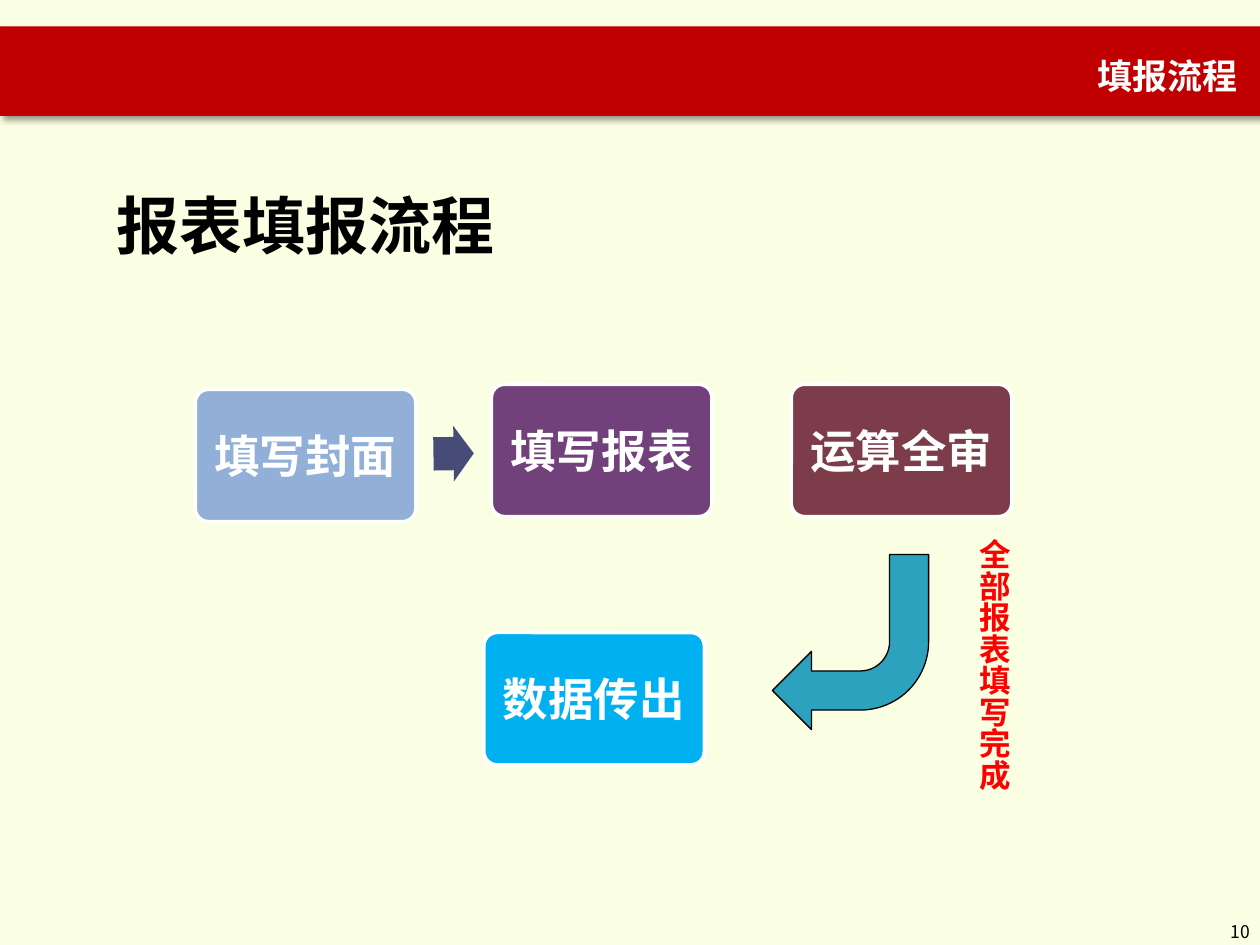
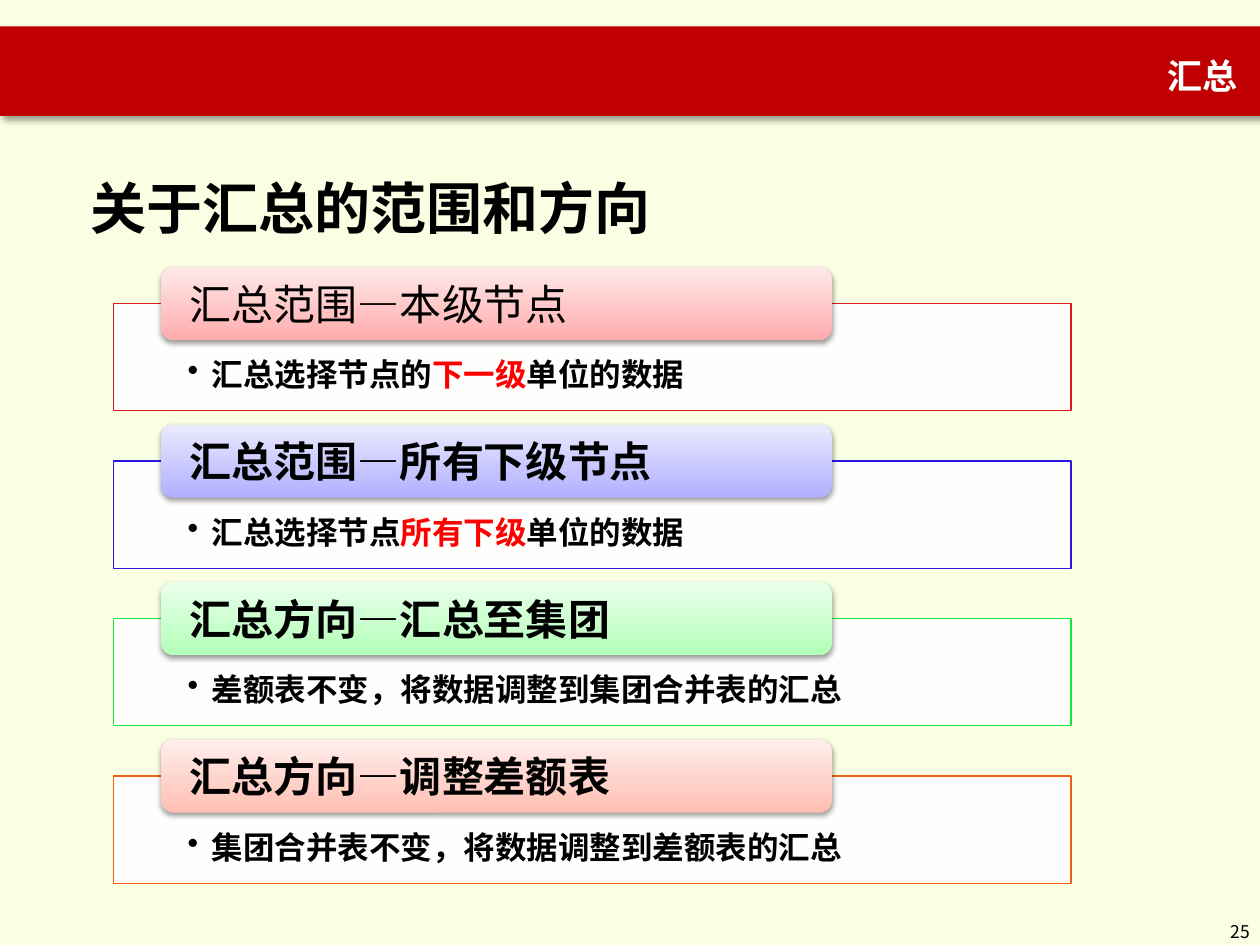
import dataclasses

import lxml.etree
import pptx
import pptx.dml.color
import pptx.enum.shapes
import pptx.enum.text
import pptx.oxml.ns
import pptx.util

Inches = pptx.util.Inches
qn = pptx.oxml.ns.qn
SHAPE = pptx.enum.shapes.MSO_SHAPE
ALIGN = pptx.enum.text.PP_ALIGN
ANCHOR = pptx.enum.text.MSO_ANCHOR
FIT = pptx.enum.text.MSO_AUTO_SIZE


@dataclasses.dataclass(frozen=True)
class Theme:
    cream: str = "FAFEE2"
    band: str = "C00000"
    white: str = "FFFFFF"
    black: str = "000000"
    red: str = "FF0000"
    arrow: str = "474B78"
    bend: str = "2DA2BF"
    cjk: str = "Noto Sans CJK SC"
    head: str = "Arial"
    body: str = "DejaVu Sans"
    page: int = 10
    note: int = 18
    title: int = 20
    tab: int = 24
    step: int = 26
    wide: int = 32
    big: int = 36


THEME = Theme()

# Step text, left, top, fill
STEPS = [
    ("填写封面", 1.55, 3.09, "92AFD8"),
    ("填写报表", 3.9, 3.05, "72417B"),
    ("运算全审", 6.28, 3.05, "7D3C4A"),
    ("数据传出", 3.84, 5.02, "00B0F0"),
]

# Tab text, bold tab, runs of the note (odd ones red), line, dark and pale tint
RULES = [
    ("汇总范围—本级节点", False, ["汇总选择节点的", "下一级", "单位的数据"],
     "DA1A23", "FFACAD", "FFE9E9"),
    ("汇总范围—所有下级节点", True, ["汇总选择节点", "所有下级", "单位的数据"],
     "2817E2", "B1AFFF", "EAEAFF"),
    ("汇总方向—汇总至集团", True, ["差额表不变，将数据调整到集团合并表的汇总"],
     "15E744", "B2FFB7", "EAFFEC"),
    ("汇总方向—调整差额表", True, ["集团合并表不变，将数据调整到差额表的汇总"],
     "EB6116", "FFBFB3", "FFEEEB"),
]


def rgb(code):
    return pptx.dml.color.RGBColor.from_string(code)


def box(left, top, width, height):
    return [Inches(side) for side in (left, top, width, height)]


def style(para, size, color, face, bold=True, align=ALIGN.LEFT):
    """Format a paragraph and return its default run properties."""
    para.alignment = align
    font = para.font
    font.size = pptx.util.Pt(size)
    font.bold = bold
    font.color.rgb = rgb(color)
    font.name = face
    props = para._p.pPr.find(qn("a:defRPr"))
    lxml.etree.SubElement(props, qn("a:ea"), typeface=THEME.cjk)
    return props


def shadow(parent, alpha, blur, dist, angle):
    """Append a black outer shadow; blur and distance are in points."""
    effects = lxml.etree.SubElement(parent, qn("a:effectLst"))
    outer = lxml.etree.SubElement(
        effects, qn("a:outerShdw"), blurRad=str(pptx.util.Pt(blur)),
        dist=str(pptx.util.Pt(dist)), dir=str(angle * 60000),
        algn="tl", rotWithShape="0")
    color = lxml.etree.SubElement(outer, qn("a:srgbClr"), val=THEME.black)
    lxml.etree.SubElement(color, qn("a:alpha"), val=str(alpha * 1000))
    return effects


def cast(shape, *values):
    """Replace the empty effect list of a shape with a shadow."""
    props = shape.element.spPr
    props.remove(props.find(qn("a:effectLst")))
    shadow(props, *values)


def add_form(slide, kind, place, fill, line=None, weight=0.75):
    shape = slide.shapes.add_shape(kind, *box(*place))
    shape.shadow.inherit = False
    if fill:
        shape.fill.solid()
        shape.fill.fore_color.rgb = rgb(fill)
    if line:
        shape.line.color.rgb = rgb(line)
        shape.line.width = pptx.util.Pt(weight)
    else:
        shape.line.fill.background()
    return shape


def inset(frame, left, top, right, bottom):
    frame.margin_left, frame.margin_top = Inches(left), Inches(top)
    frame.margin_right, frame.margin_bottom = Inches(right), Inches(bottom)


def add_label(slide, text, place, size, color, face, upright=False):
    """Add a bold one-line box; an upright one reads from top to bottom."""
    frame = slide.shapes.add_textbox(*box(*place)).text_frame
    frame.word_wrap = False
    frame.auto_size = FIT.SHAPE_TO_FIT_TEXT
    if upright:
        frame._txBody.bodyPr.set("vert", "eaVert")
    para = frame.paragraphs[0]
    para.text = text
    style(para, size, color, face)


def add_page(deck, title, number):
    """Add a slide with its red band, title and page number."""
    slide = deck.slides.add_slide(deck.slide_layouts[5])
    head = slide.shapes.title
    band = add_form(slide, SHAPE.RECTANGLE, (0, 0.21, 10.02, 0.71), THEME.band)
    cast(band, 40, 4, 3, 45)
    head.element.addprevious(band.element)

    head.left, head.top, head.width, head.height = box(2.39, 0.33, 7.53, 0.47)
    frame = head.text_frame
    frame.auto_size = FIT.NONE
    frame.vertical_anchor = ANCHOR.MIDDLE
    para = frame.paragraphs[0]
    para.text = title
    para.line_spacing = 1.2
    props = style(para, THEME.title, THEME.white, THEME.cjk, align=ALIGN.RIGHT)
    props.insert(1, shadow(props, 40, 3, 3, 45))

    foot = slide.shapes.add_textbox(*box(9.42, 7.26, 0.6, 0.24)).text_frame
    foot.word_wrap = True
    para = foot.paragraphs[0]
    para.text = str(number)
    style(para, THEME.page, THEME.black, THEME.cjk, False, ALIGN.RIGHT)
    return slide


def add_step(slide, text, left, top, fill):
    shape = add_form(slide, SHAPE.ROUNDED_RECTANGLE, (left, top, 1.75, 1.05),
                     fill, THEME.white, 2)
    shape.adjustments[0] = 0.1
    frame = shape.text_frame
    frame.word_wrap = True
    frame.vertical_anchor = ANCHOR.MIDDLE
    inset(frame, 0.11, 0.11, 0.11, 0.11)
    para = frame.paragraphs[0]
    para.text = text
    style(para, THEME.step, THEME.white, THEME.body, align=ALIGN.CENTER)


def add_panel(slide, top, parts, line):
    """Add a framed, slightly clear panel with one bulleted note."""
    panel = add_form(slide, SHAPE.RECTANGLE, (0.9, top, 7.6, 0.85),
                     THEME.white, line)
    color = panel.element.spPr.find(qn("a:solidFill")).find(qn("a:srgbClr"))
    lxml.etree.SubElement(color, qn("a:alpha"), val="90000")
    frame = panel.text_frame
    frame.word_wrap = True
    frame.vertical_anchor = ANCHOR.TOP
    inset(frame, 0.59, 0.41, 0.59, 0.14)
    para = frame.paragraphs[0]
    props = para._p.get_or_add_pPr()
    props.set("marL", str(Inches(0.19)))
    props.set("indent", str(-Inches(0.19)))
    lxml.etree.SubElement(props, qn("a:buChar"), char="•")
    style(para, THEME.note, THEME.black, THEME.body)
    for index, part in enumerate(parts):
        run = para.add_run()
        run.text = part
        if index % 2:
            run.font.color.rgb = rgb(THEME.red)


def add_tab(slide, top, text, bold, dark, pale):
    tab = add_form(slide, SHAPE.ROUNDED_RECTANGLE, (1.28, top, 5.32, 0.58), None)
    tab.fill.gradient()
    tab.fill.gradient_angle = 90
    for stop, tint in zip(tab.fill.gradient_stops, (dark, pale)):
        stop.color.rgb = rgb(tint)
    cast(tab, 38, 3.1, 1.6, 90)
    frame = tab.text_frame
    frame.word_wrap = True
    frame.vertical_anchor = ANCHOR.MIDDLE
    inset(frame, 0.2, 0, 0.2, 0)
    para = frame.paragraphs[0]
    para.text = text
    style(para, THEME.tab, THEME.black, THEME.body, bold)


def draw_flow(deck):
    slide = add_page(deck, "填报流程", 10)
    for step in STEPS:
        add_step(slide, *step)
    arrow = add_form(slide, SHAPE.RIGHT_ARROW, (3.44, 3.38, 0.32, 0.44),
                     THEME.arrow)
    arrow.adjustments[0] = 0.6
    arrow.rotation = 359.2
    bend = add_form(slide, SHAPE.BENT_ARROW, (6.13, 4.4, 1.24, 1.39),
                    THEME.bend, THEME.black)
    bend.rotation = 180
    add_label(slide, "全部报表填写完成", (7.58, 4.18, 0.51, 2.09),
              THEME.note, THEME.red, THEME.head, upright=True)
    add_label(slide, "报表填报流程", (0.83, 1.43, 3.24, 0.71),
              THEME.big, THEME.black, THEME.head)


def draw_rules(deck):
    slide = add_page(deck, "汇总", 25)
    for row, (text, bold, parts, line, dark, pale) in enumerate(RULES):
        top = 2.12 + 1.25 * row
        add_panel(slide, top + 0.29, parts, line)
        add_tab(slide, top, text, bold, dark, pale)
    add_label(slide, "关于汇总的范围和方向", (0.62, 1.33, 4.71, 0.64),
              THEME.wide, THEME.black, THEME.head)


def main():
    deck = pptx.Presentation()
    deck.slide_width, deck.slide_height = Inches(10), Inches(7.5)
    back = deck.slide_master.background.fill
    back.solid()
    back.fore_color.rgb = rgb(THEME.cream)
    draw_flow(deck)
    draw_rules(deck)
    deck.save("out.pptx")


if __name__ == "__main__":
    main()
